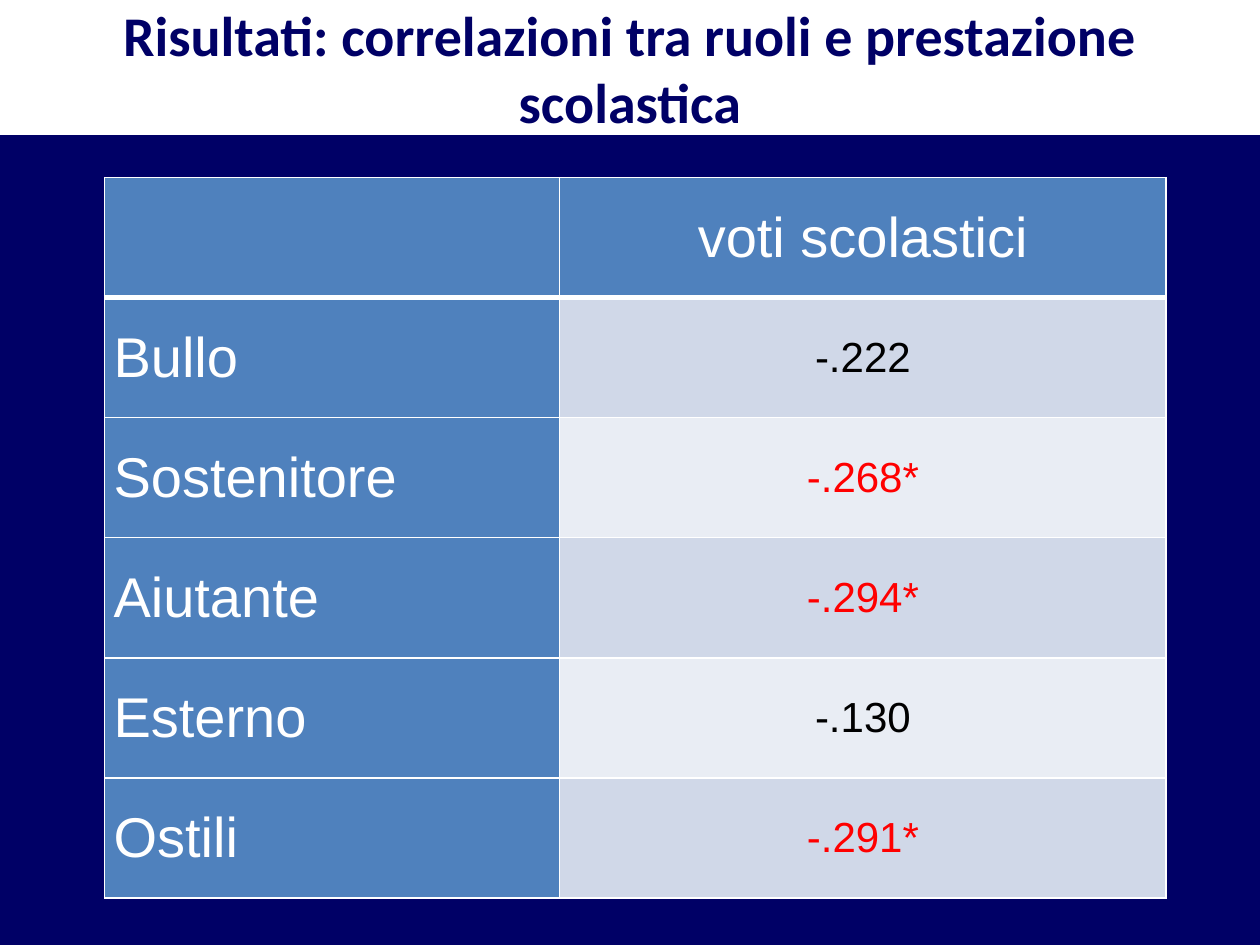
from dataclasses import dataclass

import lxml.etree
import pptx
import pptx.dml.color
import pptx.enum.shapes
import pptx.enum.text
import pptx.oxml.ns
import pptx.util

Cm = pptx.util.Cm
Pt = pptx.util.Pt
ALIGN = pptx.enum.text.PP_ALIGN
MIDDLE = pptx.enum.text.MSO_ANCHOR.MIDDLE

COLORS = {
    "navy": "000066",
    "white": "FFFFFF",
    "black": "000000",
    "red": "FF0000",
    "blue": "4F81BD",
    "dark band": "D0D8E8",
    "light band": "E9EDF4",
}


@dataclass
class Correlation:
    role: str
    value: str

    @property
    def color(self) -> str:
        return "red" if self.value.endswith("*") else "black"


CORRELATIONS = [
    Correlation("Bullo", "-.222"),
    Correlation("Sostenitore", "-.268*"),
    Correlation("Aiutante", "-.294*"),
    Correlation("Esterno", "-.130"),
    Correlation("Ostili", "-.291*"),
]


def rgb(name: str) -> pptx.dml.color.RGBColor:
    return pptx.dml.color.RGBColor.from_string(COLORS[name])


def paint(fill, color: str) -> None:
    fill.solid()
    fill.fore_color.rgb = rgb(color)


def write(frame, text: str, size: int, color: str, align,
          font: str = "Arial", bold: bool = False) -> None:
    paragraph = frame.paragraphs[0]
    paragraph.text = text
    paragraph.alignment = align
    paragraph.font.name = font
    paragraph.font.size = Pt(size)
    paragraph.font.bold = bold
    paragraph.font.color.rgb = rgb(color)


def add_borders(cell, top: int, bottom: int) -> None:
    qn = pptx.oxml.ns.qn
    properties = cell._tc.get_or_add_tcPr()
    for side, width in {"L": 1, "R": 1, "T": top, "B": bottom}.items():
        line = lxml.etree.SubElement(properties, qn(f"a:ln{side}"), w=str(Pt(width)))
        fill = lxml.etree.SubElement(line, qn("a:solidFill"))
        lxml.etree.SubElement(fill, qn("a:srgbClr"), val=COLORS["white"])


def fill_cell(table, row: int, column: int, text: str, size: int,
              color: str, background: str, align) -> None:
    cell = table.cell(row, column)
    cell.margin_left = cell.margin_right = Cm(0.18)
    cell.margin_top = cell.margin_bottom = 0
    cell.vertical_anchor = MIDDLE
    add_borders(cell, 3 if row == 1 else 1, 3 if row == 0 else 1)
    paint(cell.fill, background)
    write(cell.text_frame, text, size, color, align)


def add_title(slide, text: str) -> None:
    title = slide.shapes.add_shape(
        pptx.enum.shapes.MSO_SHAPE.RECTANGLE, 0, 0, Cm(25.4), Cm(2.72))
    title.shadow.inherit = False
    paint(title.fill, "white")
    title.line.fill.background()
    title.text_frame.word_wrap = True
    title.text_frame.vertical_anchor = MIDDLE
    write(title.text_frame, text, 32, "navy", ALIGN.CENTER, "Calibri", True)


def add_correlations(slide, correlations: list[Correlation]) -> None:
    widths = [Cm(9.17), Cm(12.23)]
    row_height = Cm(2.42)
    row_count = len(correlations) + 1
    table = slide.shapes.add_table(
        row_count, len(widths), Cm(2.11), Cm(3.58),
        sum(widths), row_height * row_count).table
    for column, width in zip(table.columns, widths):
        column.width = width
    for row in table.rows:
        row.height = row_height

    for column, heading in enumerate(["", "voti scolastici"]):
        fill_cell(table, 0, column, heading, 32, "white", "blue", ALIGN.CENTER)
    for row, correlation in enumerate(correlations, start=1):
        band = "dark band" if row % 2 else "light band"
        fill_cell(table, row, 0, correlation.role, 32, "white", "blue", ALIGN.LEFT)
        fill_cell(table, row, 1, correlation.value, 24, correlation.color,
                  band, ALIGN.CENTER)


def main() -> None:
    presentation = pptx.Presentation()
    presentation.slide_width = Cm(25.4)
    presentation.slide_height = Cm(19.05)
    slide = presentation.slides.add_slide(presentation.slide_layouts[6])
    paint(slide.background.fill, "navy")
    add_title(slide, "Risultati: correlazioni tra ruoli e prestazione scolastica")
    add_correlations(slide, CORRELATIONS)
    presentation.save("out.pptx")


if __name__ == "__main__":
    main()
